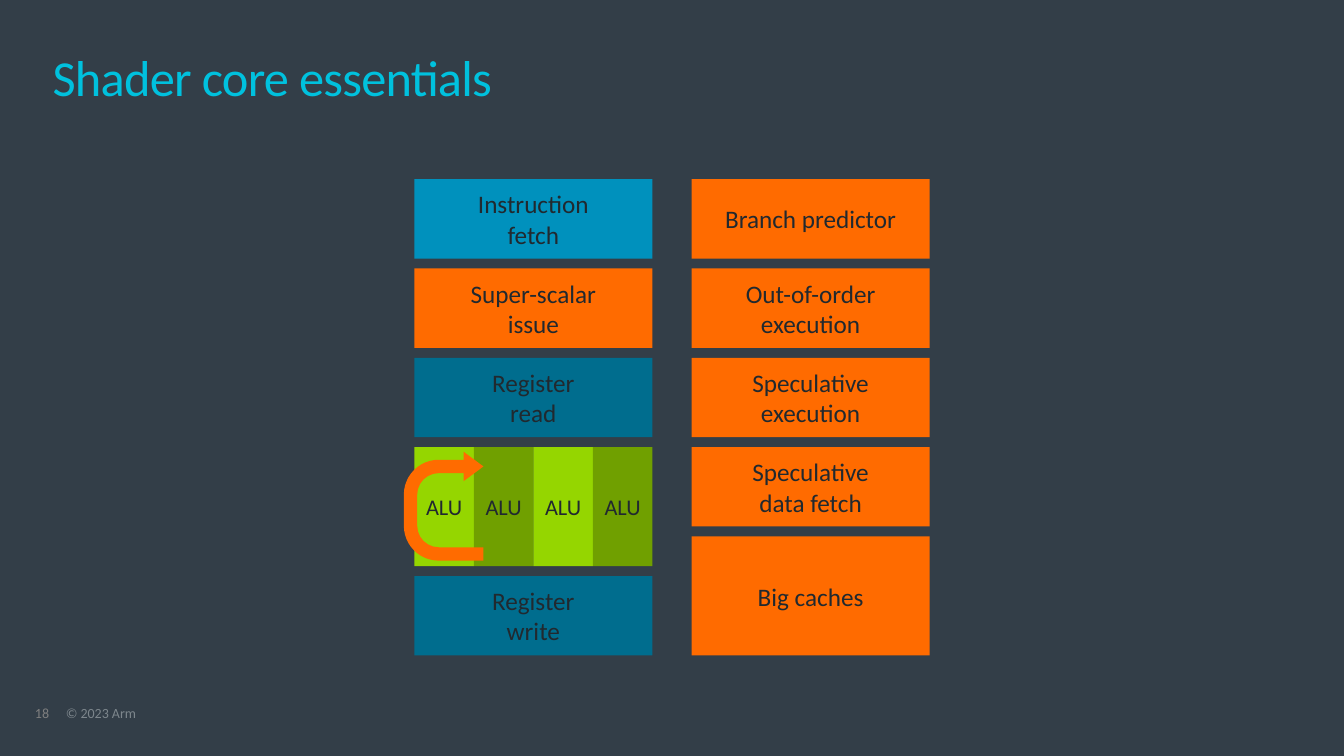
from pptx import Presentation
from pptx.dml.color import RGBColor
from pptx.enum.shapes import MSO_SHAPE
from pptx.enum.text import MSO_ANCHOR, MSO_AUTO_SIZE, PP_ALIGN
from pptx.util import Pt

RECT, UTURN = MSO_SHAPE.RECTANGLE, MSO_SHAPE.U_TURN_ARROW
MIDDLE, CENTER, LEFT = MSO_ANCHOR.MIDDLE, PP_ALIGN.CENTER, PP_ALIGN.LEFT
NO_FIT = MSO_AUTO_SIZE.NONE

SLATE = RGBColor(0x33, 0x3E, 0x48)
INK = RGBColor(0x21, 0x29, 0x2F)
CYAN = RGBColor(0x00, 0xC1, 0xDE)
BLUE = RGBColor(0x00, 0x91, 0xBD)
TEAL = RGBColor(0x00, 0x6D, 0x8E)
ORANGE = RGBColor(0xFF, 0x6B, 0x00)
LIME = RGBColor(0x95, 0xD6, 0x00)
GREEN = RGBColor(0x70, 0xA0, 0x00)
GREY = RGBColor(0x7F, 0x7F, 0x7F)
SILVER = RGBColor(0x7D, 0x86, 0x8C)

FONT = "Calibri"
GAP = 7.1
LOW, TALL = 56.7, 85


def write(para, text, size, color):
    """Set the text of a paragraph and format its runs."""
    para.text = text
    for run in para.runs:
        run.font.name = FONT
        run.font.size = Pt(size)
        run.font.color.rgb = color


def trim(frame):
    """Remove the margins of a text frame."""
    frame.margin_left = frame.margin_right = 0
    frame.margin_top = frame.margin_bottom = 0
    frame.word_wrap = True


def add_form(slide, kind, left, top, width, height, fill):
    """Add a flat preset shape without an outline."""
    form = slide.shapes.add_shape(kind, Pt(left), Pt(top), Pt(width), Pt(height))
    form.shadow.inherit = False
    form.fill.solid()
    form.fill.fore_color.rgb = fill
    form.line.fill.background()
    return form


def add_block(slide, left, top, width, height, fill, text, size=18):
    """Add a filled block with a centred label."""
    frame = add_form(slide, RECT, left, top, width, height, fill).text_frame
    frame.word_wrap = True
    frame.vertical_anchor = MIDDLE
    para = frame.paragraphs[0]
    para.alignment = CENTER
    write(para, text, size, INK)


def add_units(slide, left, top, width, height):
    """Add the row of ALU blocks and the arrow that loops over them."""
    step = width / 4
    for i, fill in enumerate((LIME, GREEN) * 2):
        add_block(slide, left + i * step, top, step, height, fill, "ALU", 16)
    loop = add_form(slide, UTURN, left - 18, top + 13.7, 77.8, 56.9, ORANGE)
    loop.rotation = 270
    for i, value in enumerate((0.168, 0.185, 0.25, 0.438, 1)):
        loop.adjustments[i] = value


def add_stack(slide, left, top, width, rows):
    """Stack rows of height, fill and text; a row without text holds the ALUs."""
    for height, fill, text in rows:
        if text:
            add_block(slide, left, top, width, height, fill, text)
        else:
            add_units(slide, left, top, width, height)
        top += height + GAP


def add_title(slide, left, top, width, height, text):
    """Place and format the title placeholder."""
    title = slide.shapes.title
    title.left, title.top = Pt(left), Pt(top)
    title.width, title.height = Pt(width), Pt(height)
    frame = title.text_frame
    trim(frame)
    frame.auto_size = NO_FIT
    frame.vertical_anchor = MIDDLE
    para = frame.paragraphs[0]
    para.alignment = LEFT
    para.line_spacing = 0.85
    write(para, text, 36, CYAN)
    para.runs[0].font._element.set("spc", "-50")


def add_note(slide, left, top, width, height, text, color):
    """Add one small footer text."""
    box = slide.shapes.add_textbox(Pt(left), Pt(top), Pt(width), Pt(height))
    trim(box.text_frame)
    para = box.text_frame.paragraphs[0]
    para.line_spacing = 0.9
    para.space_after = Pt(6)
    write(para, text, 10, color)


def add_core(deck):
    """Build the shader core slide."""
    slide = deck.slides.add_slide(deck.slide_layouts[5])
    slide.background.fill.solid()
    slide.background.fill.fore_color.rgb = SLATE
    add_title(slide, 37.5, 37.5, 884, 41, "Shader core essentials")
    add_stack(slide, 296, 128, 170, [
        (LOW, BLUE, "Instruction\nfetch"),
        (LOW, ORANGE, "Super-scalar\nissue"),
        (LOW, TEAL, "Register\nread"),
        (TALL, None, None),
        (LOW, TEAL, "Register\nwrite"),
    ])
    add_stack(slide, 494, 128, 170, [
        (LOW, ORANGE, "Branch predictor"),
        (LOW, ORANGE, "Out-of-order\nexecution"),
        (LOW, ORANGE, "Speculative\nexecution"),
        (LOW, ORANGE, "Speculative\ndata fetch"),
        (TALL, ORANGE, "Big caches"),
    ])
    add_note(slide, 25, 504.5, 22, 11, "18", GREY)
    add_note(slide, 47, 504.5, 365, 11, "© 2023 Arm", SILVER)


def main():
    """Create and save the deck."""
    deck = Presentation()
    deck.slide_width, deck.slide_height = Pt(960), Pt(540)
    add_core(deck)
    deck.save("out.pptx")


if __name__ == "__main__":
    main()
